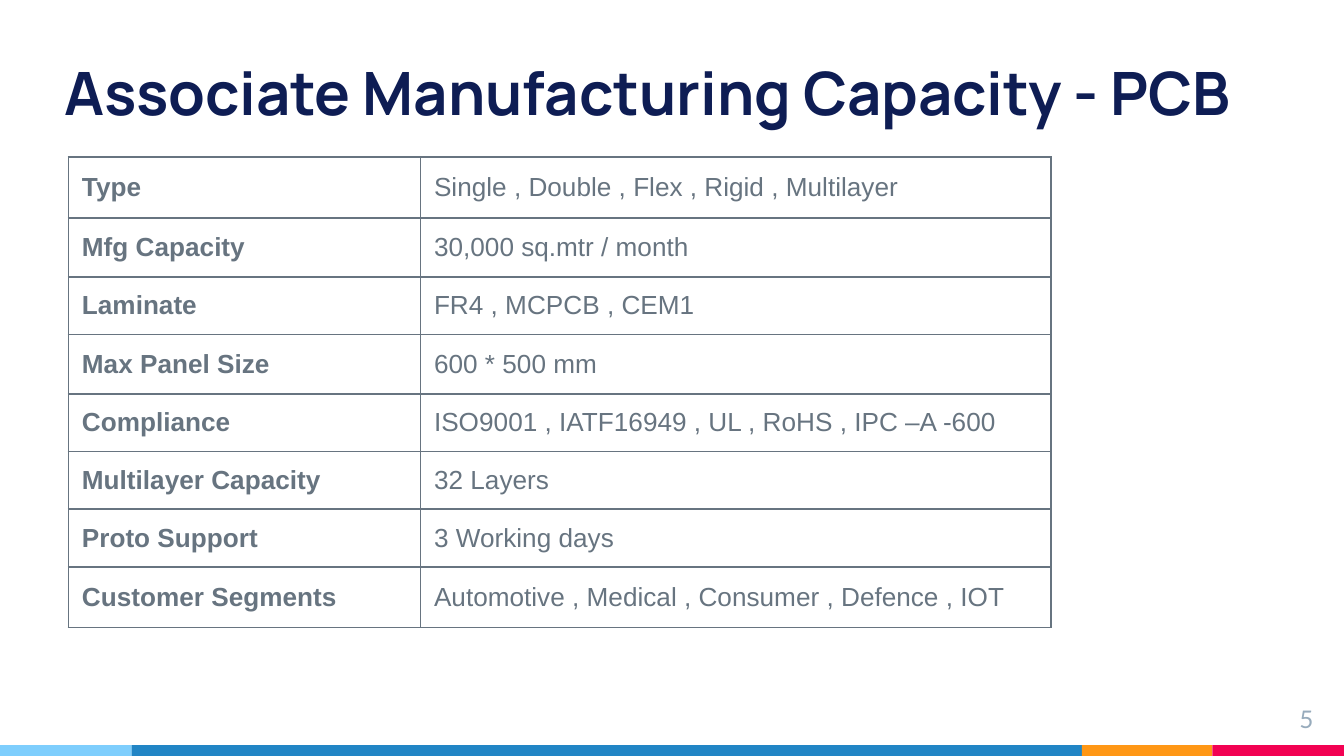
from dataclasses import dataclass

from lxml import etree
from pptx import Presentation
from pptx.dml.color import RGBColor
from pptx.enum.shapes import MSO_SHAPE
from pptx.enum.text import MSO_ANCHOR, PP_ALIGN
from pptx.oxml.ns import qn
from pptx.util import Inches, Pt

RECTANGLE = MSO_SHAPE.RECTANGLE
TOP, MIDDLE, BOTTOM = MSO_ANCHOR.TOP, MSO_ANCHOR.MIDDLE, MSO_ANCHOR.BOTTOM
LEFT, RIGHT = PP_ALIGN.LEFT, PP_ALIGN.RIGHT

PAGE_WIDTH = 10
PAGE_HEIGHT = PAGE_WIDTH * 9 / 16
STRIPE_HEIGHT = 0.08
SLATE = "677480"

STRIPES = [(0.98, "7ECEFD"), (7.07, "2185C5"), (0.97, "FF9715"), (0.98, "F20253")]
COLUMN_WIDTHS = [2.62, 4.69]
ROW_HEIGHTS = [0.45, 0.44, 0.43, 0.44, 0.43, 0.43, 0.43, 0.45]
CAPACITY = [
    ("Type", "Single , Double , Flex , Rigid , Multilayer"),
    ("Mfg Capacity", "30,000 sq.mtr / month"),
    ("Laminate", "FR4 , MCPCB , CEM1"),
    ("Max Panel Size", "600 * 500 mm"),
    ("Compliance", "ISO9001 , IATF16949 , UL , RoHS , IPC –A -600"),
    ("Multilayer Capacity", "32 Layers"),
    ("Proto Support", "3 Working days"),
    ("Customer Segments", "Automotive , Medical , Consumer , Defence , IOT"),
]


@dataclass(frozen=True)
class TextStyle:
    font: str
    size: float
    color: str
    bold: bool = False
    align: PP_ALIGN = LEFT


@dataclass(frozen=True)
class Label:
    text: str
    left: float
    top: float
    width: float
    height: float
    style: TextStyle
    anchor: MSO_ANCHOR = TOP


LABELS = [
    Label("5", 9.27, 5.14, 0.6, 0.34, TextStyle("Lato", 13, "97ABBC", align=RIGHT)),
    Label("Associate Manufacturing Capacity - PCB", 0.38, 0.11, 9.16, 0.94,
          TextStyle("Manrope", 32, "0E1D54", bold=True), BOTTOM),
]


def rgb(value: str) -> RGBColor:
    return RGBColor.from_string(value)


def write(frame, text: str, style: TextStyle) -> None:
    para = frame.paragraphs[0]
    para.alignment = style.align
    span = para.add_run()
    span.text = text
    formats = {"name": style.font, "size": Pt(style.size), "bold": style.bold}
    for name, value in formats.items():
        setattr(span.font, name, value)
    span.font.color.rgb = rgb(style.color)


def add_label(page, label: Label) -> None:
    box = page.shapes.add_textbox(Inches(label.left), Inches(label.top),
                                  Inches(label.width), Inches(label.height))
    frame = box.text_frame
    frame.word_wrap = True
    frame.vertical_anchor = label.anchor
    for side in ("left", "top", "right", "bottom"):
        setattr(frame, f"margin_{side}", Inches(0.1))
    write(frame, label.text, label.style)


def add_stripes(page) -> None:
    left = 0
    for width, color in STRIPES:
        stripe = page.shapes.add_shape(
            RECTANGLE, Inches(left), Inches(PAGE_HEIGHT - STRIPE_HEIGHT),
            Inches(width), Inches(STRIPE_HEIGHT))
        stripe.shadow.inherit = False
        stripe.fill.solid()
        stripe.fill.fore_color.rgb = rgb(color)
        stripe.line.fill.background()
        left += width


def add_borders(cell, color: str, points: float) -> None:
    properties = cell._tc.get_or_add_tcPr()
    for position, side in enumerate(("lnL", "lnR", "lnT", "lnB")):
        line = etree.Element(qn(f"a:{side}"), w=str(Pt(points)))
        fill = etree.SubElement(line, qn("a:solidFill"))
        etree.SubElement(fill, qn("a:srgbClr"), val=color)
        properties.insert(position, line)


def add_capacity_table(page) -> None:
    table = page.shapes.add_table(
        len(CAPACITY), len(COLUMN_WIDTHS), Inches(0.51), Inches(1.17),
        Inches(sum(COLUMN_WIDTHS)), Inches(sum(ROW_HEIGHTS))).table
    table.first_row = table.horz_banding = False
    for column, width in zip(table.columns, COLUMN_WIDTHS):
        column.width = Inches(width)
    for row, height, texts in zip(table.rows, ROW_HEIGHTS, CAPACITY):
        row.height = Inches(height)
        for index, (cell, text) in enumerate(zip(row.cells, texts)):
            cell.fill.background()
            cell.vertical_anchor = MIDDLE
            add_borders(cell, SLATE, 1)
            write(cell.text_frame, text, TextStyle("Arial", 14, SLATE, bold=index == 0))


def main() -> None:
    deck = Presentation()
    deck.slide_width, deck.slide_height = Inches(PAGE_WIDTH), Inches(PAGE_HEIGHT)
    page = deck.slides.add_slide(deck.slide_layouts[6])
    add_stripes(page)
    for label in LABELS:
        add_label(page, label)
    add_capacity_table(page)
    deck.save("out.pptx")


if __name__ == "__main__":
    main()
